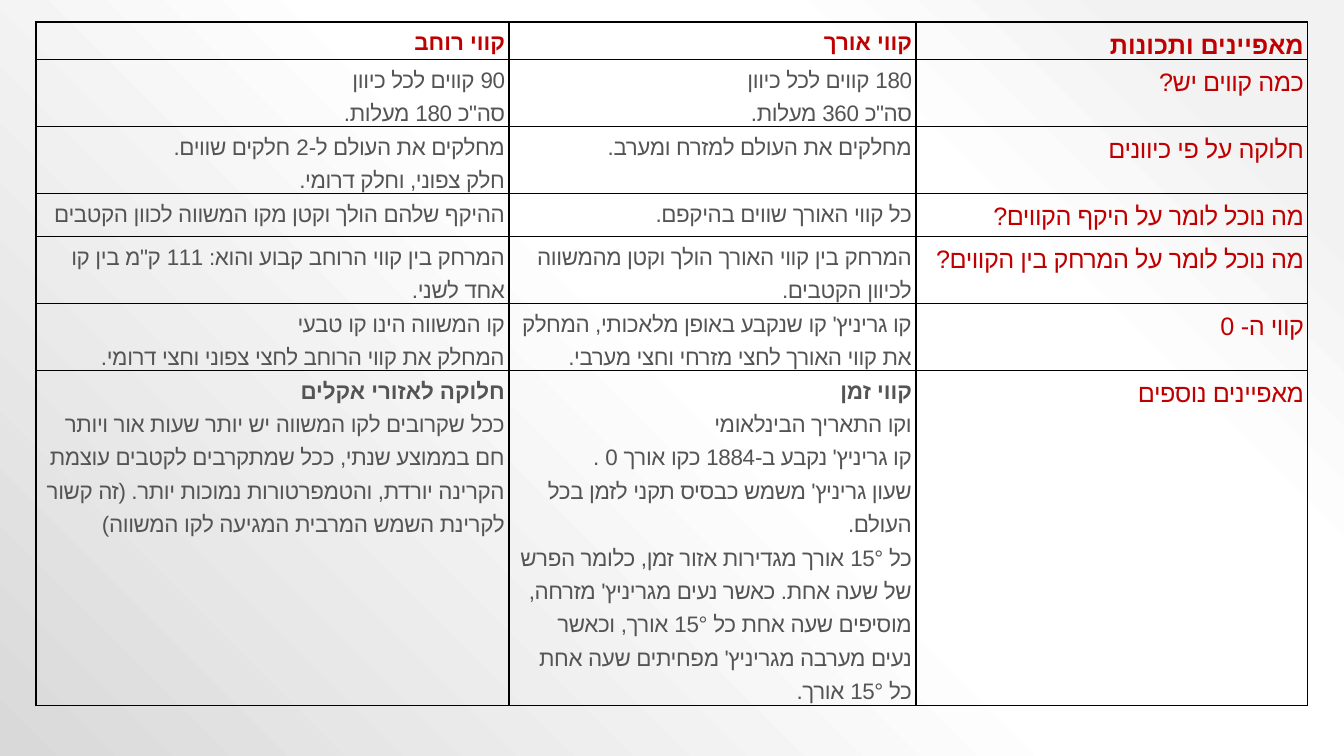
from lxml.etree import SubElement
from pptx import Presentation
from pptx.dml.color import RGBColor
from pptx.enum.lang import MSO_LANGUAGE_ID as Language
from pptx.enum.text import PP_ALIGN as Align
from pptx.oxml import parse_xml
from pptx.oxml.ns import nsdecls, qn
from pptx.util import Pt

EMU_PER_PX = 914400 / 100.8
RED, GREY, BLACK = "C00000", "545454", "000000"
GRADIENT = [(10, "F2F2F2"), (28, "FFFFFF"), (48, "FFFFFF"), (100, "D9D9D9")]

COLUMN_WIDTHS = [473, 407, 392]
ROW_HEIGHTS = [37, 67, 67, 43, 67, 67, 335]
LATITUDE_COLUMN, LONGITUDE_COLUMN, TOPIC_COLUMN = range(3)

# Each row: latitude lines, longitude lines, topic
ROWS = [
    (["קווי רוחב"], ["קווי אורך"], ["מאפיינים ותכונות"]),
    (["90 קווים לכל כיוון", "סה\"כ 180 מעלות."],
     ["180 קווים לכל כיוון", "סה\"כ 360 מעלות."],
     ["כמה קווים יש?"]),
    (["מחלקים את העולם ל-2 חלקים שווים.", "חלק צפוני, וחלק דרומי."],
     ["מחלקים את העולם למזרח ומערב."],
     ["חלוקה על פי כיוונים"]),
    (["ההיקף שלהם הולך וקטן מקו המשווה לכוון הקטבים"],
     ["כל קווי האורך שווים בהיקפם."],
     ["מה נוכל לומר על היקף הקווים?"]),
    (["המרחק בין קווי הרוחב קבוע והוא: 111 ק\"מ בין קו אחד לשני."],
     ["המרחק בין קווי האורך הולך וקטן מהמשווה לכיוון הקטבים."],
     ["מה נוכל לומר על המרחק בין הקווים?"]),
    (["קו המשווה הינו קו טבעי",
      "המחלק את קווי הרוחב לחצי צפוני וחצי דרומי."],
     ["קו גריניץ' קו שנקבע באופן מלאכותי, המחלק את קווי האורך "
      "לחצי מזרחי וחצי מערבי."],
     ["קווי ה- 0"]),
    (["חלוקה לאזורי אקלים",
      "ככל שקרובים לקו המשווה יש יותר שעות אור ויותר חם בממוצע שנתי, "
      "ככל שמתקרבים לקטבים עוצמת הקרינה יורדת, והטמפרטורות נמוכות יותר. "
      "(זה קשור לקרינת השמש המרבית המגיעה לקו המשווה)"],
     ["קווי זמן",
      "וקו התאריך הבינלאומי",
      "קו גריניץ' נקבע ב-1884 כקו אורך 0 .",
      "שעון גריניץ' משמש כבסיס תקני לזמן בכל העולם.",
      "כל 15° אורך מגדירות אזור זמן, כלומר הפרש של שעה אחת. "
      "כאשר נעים מגריניץ' מזרחה, מוסיפים שעה אחת כל 15° אורך, "
      "וכאשר נעים מערבה מגריניץ' מפחיתים שעה אחת כל 15° אורך."],
     ["מאפיינים נוספים"]),
]


def px(length):
    return round(length * EMU_PER_PX)


def colour(value):
    return RGBColor.from_string(value)


def set_attributes(target, values):
    for name, value in values.items():
        setattr(target, name, value)


class SlideBuilder:
    latin_font = "Calibri"
    hebrew_font = "Arial"
    line_ratio = 1.49
    tracking = {16: -25, 18: -35}  # hundredths of a point, regular weight

    def __init__(self, deck):
        self.page = deck.slides.add_slide(deck.slide_layouts[6])

    def background(self, stops):
        """Fill the page with a gradient spreading from the top right corner."""
        marks = "".join(
            f'<a:gs pos="{position * 1000}"><a:srgbClr val="{value}"/></a:gs>'
            for position, value in stops)
        self.page.element.cSld.insert(0, parse_xml(
            f'<p:bg {nsdecls("p", "a")}><p:bgPr><a:gradFill rotWithShape="1">'
            f'<a:gsLst>{marks}</a:gsLst><a:path path="circle">'
            '<a:fillToRect l="100000" b="100000"/></a:path></a:gradFill>'
            '<a:effectLst/></p:bgPr></p:bg>'))

    def table(self, left, top, widths, heights):
        frame = self.page.shapes.add_table(
            len(heights), len(widths), px(left), px(top),
            px(sum(widths)), px(sum(heights)))
        grid = frame.table
        set_attributes(grid, {"first_row": False, "horz_banding": False})
        for column, width in zip(grid.columns, widths):
            column.width = px(width)
        for row, height in zip(grid.rows, heights):
            row.height = px(height)
        return grid

    def cell(self, cell, lines, size, value, bold_lines):
        set_attributes(cell, {"margin_left": px(4), "margin_right": px(4),
                              "margin_top": 0, "margin_bottom": 0})
        cell.fill.background()
        self.borders(cell)
        frame = cell.text_frame
        for index, line in enumerate(lines):
            para = frame.add_paragraph() if index else frame.paragraphs[0]
            self.paragraph(para, line, size, value, index < bold_lines)

    def borders(self, cell):
        properties = cell._tc.get_or_add_tcPr()
        for index, side in enumerate(("lnL", "lnR", "lnT", "lnB")):
            properties.insert(index, parse_xml(
                f'<a:{side} {nsdecls("a")} w="{Pt(1)}"><a:solidFill>'
                f'<a:srgbClr val="{BLACK}"/></a:solidFill></a:{side}>'))

    def paragraph(self, para, text, size, value, bold):
        """Write one right-to-left line of text."""
        set_attributes(para, {"alignment": Align.RIGHT,
                              "line_spacing": Pt(size * self.line_ratio)})
        para._p.get_or_add_pPr().set("rtl", "1")
        span = para.add_run()
        span.text = text
        set_attributes(span.font, {"name": self.latin_font, "size": Pt(size),
                                   "bold": bold,
                                   "language_id": Language.HEBREW})
        span.font.color.rgb = colour(value)
        properties = span._r.get_or_add_rPr()
        SubElement(properties, qn("a:cs"), typeface=self.hebrew_font)
        if not bold:
            properties.set("spc", str(self.tracking[size]))


def main():
    deck = Presentation()
    set_attributes(deck, {"slide_width": px(1344), "slide_height": px(756)})
    builder = SlideBuilder(deck)
    builder.background(GRADIENT)
    grid = builder.table(36, 22, COLUMN_WIDTHS, ROW_HEIGHTS)
    for row, contents in enumerate(ROWS):
        for column, lines in enumerate(contents):
            is_topic = column == TOPIC_COLUMN
            is_header = row == 0
            has_heading = row == len(ROWS) - 1 and not is_topic
            builder.cell(grid.cell(row, column), lines,
                         size=18 if is_topic else 16,
                         value=RED if is_topic or is_header else GREY,
                         bold_lines=int(is_header or has_heading))
    deck.save("out.pptx")


if __name__ == "__main__":
    main()
